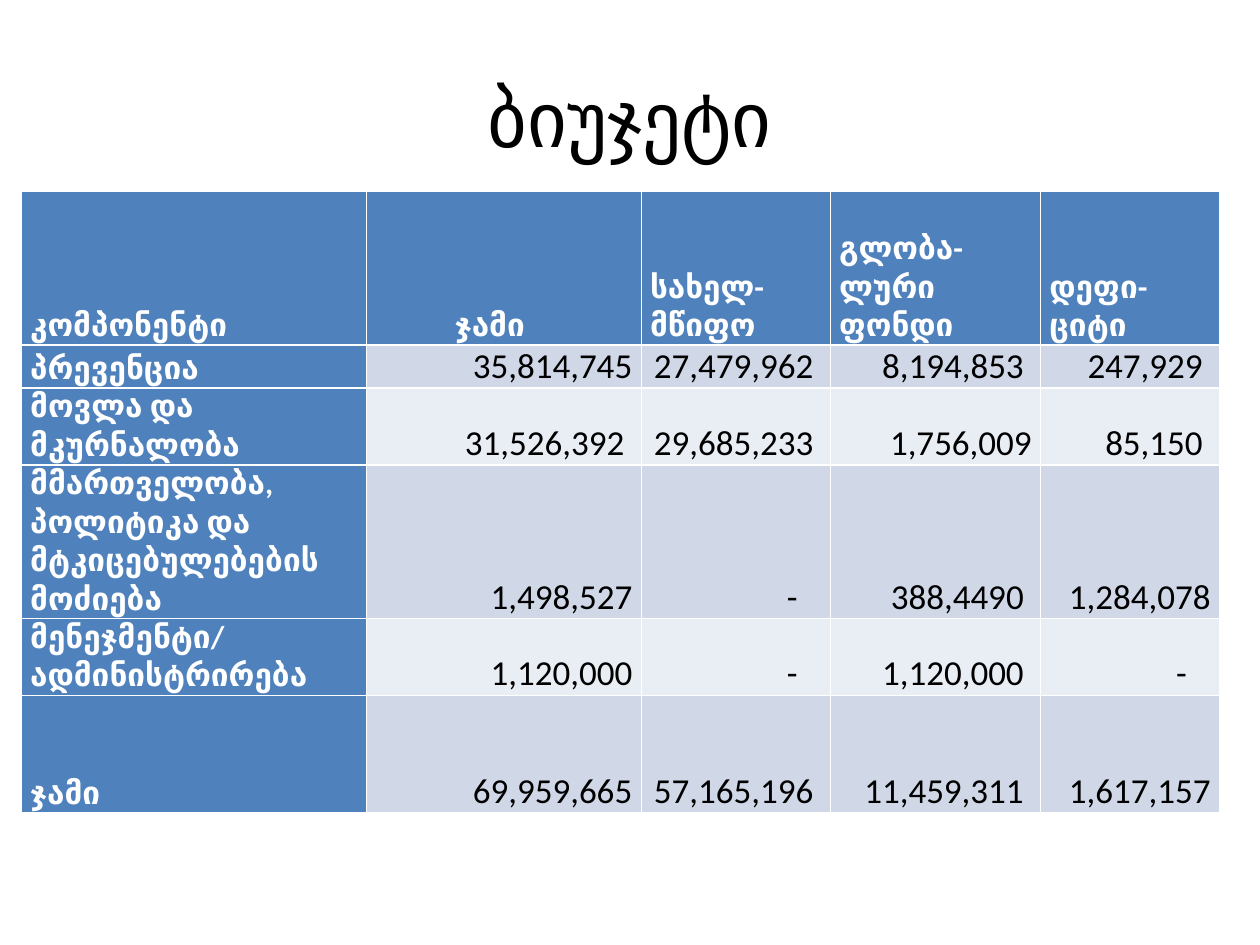
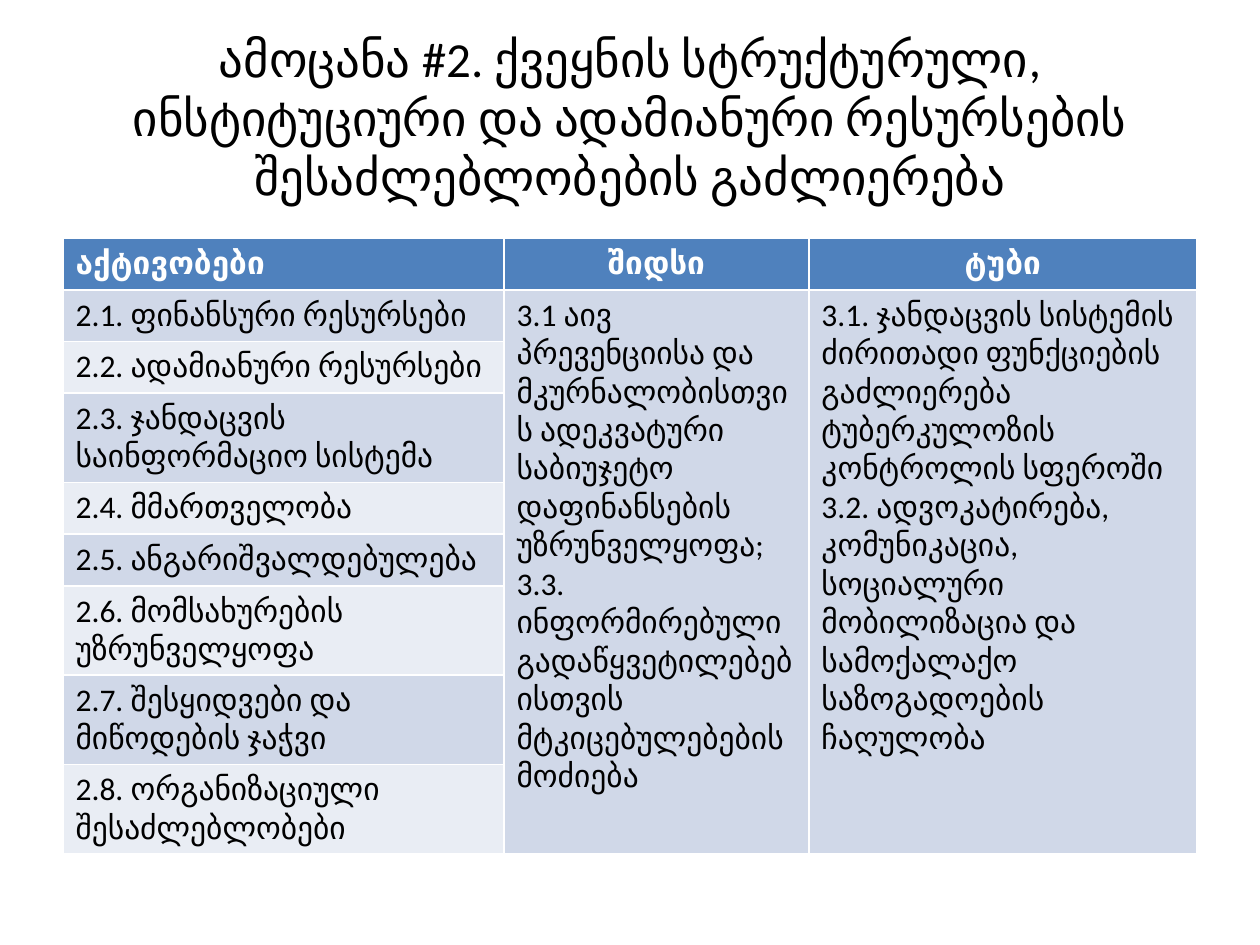
from pptx import Presentation
from pptx import util as u
from pptx.dml.color import RGBColor
from pptx.enum import text

BLUE = RGBColor(0x4F, 0x81, 0xBD)
BANDS = RGBColor(0xD0, 0xD8, 0xE8), RGBColor(0xE9, 0xED, 0xF4)
WHITE = RGBColor(255, 255, 255)
BLACK = RGBColor(0, 0, 0)
LEFT, MID, RIGHT = (text.PP_ALIGN.LEFT, text.PP_ALIGN.CENTER,
                    text.PP_ALIGN.RIGHT)
TOP, LOW = text.MSO_ANCHOR.TOP, text.MSO_ANCHOR.BOTTOM


class Deck:
    """Holds the shared style and the current slide."""

    def __init__(self):
        self.prs = Presentation()
        self.prs.slide_width = u.Inches(10)
        self.prs.slide_height = u.Inches(7.5)
        self.slide = None

    def page(self, title, size):
        self.slide = self.prs.slides.add_slide(self.prs.slide_layouts[6])
        box = self.slide.shapes.add_textbox(
            u.Inches(0.5), u.Inches(0.3), u.Inches(9), u.Inches(1.25))
        frame = box.text_frame
        frame.word_wrap = True
        frame.vertical_anchor = text.MSO_ANCHOR.MIDDLE
        self.label(frame, title, size, BLACK, align=MID)

    def label(self, frame, words, size, color, bold=False, align=LEFT):
        for i, line in enumerate(words.split("\n")):
            para = frame.add_paragraph() if i else frame.paragraphs[0]
            para.alignment = align
            run = para.add_run()
            run.text = line
            font = run.font
            font.name, font.size, font.bold = "Calibri", u.Pt(size), bold
            font.color.rgb = color

    def table(self, left, top, cols, rows):
        frame = self.slide.shapes.add_table(
            len(rows), len(cols), u.Inches(left), u.Inches(top),
            u.Inches(sum(cols)), u.Inches(sum(rows)))
        grid = frame.table
        for col, width in zip(grid.columns, cols):
            col.width = u.Inches(width)
        for row, height in zip(grid.rows, rows):
            row.height = u.Inches(height)
        return grid

    def cell(self, cell, words, row, size=18, head=False, align=LEFT,
             anchor=TOP):
        cell.fill.solid()
        cell.fill.fore_color.rgb = BLUE if head else BANDS[(row - 1) % 2]
        cell.vertical_anchor = anchor
        self.label(cell.text_frame, words, size,
                   WHITE if head else BLACK, head, align)

    def pad(self, cell, left=0.07, right=0.07):
        cell.margin_left, cell.margin_right = u.Inches(left), u.Inches(right)
        cell.margin_top = cell.margin_bottom = 0


BUDGET = [
    ("კომპონენტი", "ჯამი", "სახელ-მწიფო", "გლობა-ლური ფონდი", "დეფი-ციტი"),
    ("პრევენცია", "35,814,745", "27,479,962 ", "8,194,853 ", "247,929 "),
    ("მოვლა და მკურნალობა", "31,526,392 ", "29,685,233 ", "1,756,009",
     "85,150 "),
    ("მმართველობა, პოლიტიკა და მტკიცებულებების მოძიება", "1,498,527", "-",
     "388,4490 ", "1,284,078"),
    ("მენეჯმენტი/ადმინისტრირება", "1,120,000", "-", "1,120,000 ", "-"),
    ("ჯამი", "69,959,665", "57,165,196 ", "11,459,311 ", "1,617,157"),
]

HEADS = "აქტივობები", "შიდსი", "ტუბი"
TASKS = [
    "2.1. ფინანსური რესურსები",
    "2.2. ადამიანური რესურსები",
    "2.3. ჯანდაცვის საინფორმაციო სისტემა",
    "2.4. მმართველობა",
    "2.5. ანგარიშვალდებულება",
    "2.6. მომსახურების უზრუნველყოფა",
    "2.7. შესყიდვები და მიწოდების ჯაჭვი",
    "2.8. ორგანიზაციული შესაძლებლობები",
]
GOALS = [
    "3.1 აივ პრევენციისა და მკურნალობისთვის ადეკვატური საბიუჯეტო "
    "დაფინანსების უზრუნველყოფა; 3.3. ინფორმირებული "
    "გადაწყვეტილებებისთვის მტკიცებულებების მოძიება",
    "3.1. ჯანდაცვის სისტემის ძირითადი ფუნქციების გაძლიერება "
    "ტუბერკულოზის კონტროლის სფეროში\n"
    "3.2. ადვოკატირება, კომუნიკაცია, სოციალური მობილიზაცია და "
    "სამოქალაქო საზოგადოების ჩაღულობა",
]


def budget(deck):
    deck.page("ბიუჯეტი", 44)
    grid = deck.table(0.17, 1.52, [2.74, 2.18, 1.5, 1.67, 1.42],
                      [1.22, 0.34, 0.61, 1.22, 0.61, 0.93])
    grid.first_col = True
    for r, line in enumerate(BUDGET):
        for c, words in enumerate(line):
            cell = grid.cell(r, c)
            head = r == 0 or c == 0
            deck.cell(cell, words, r, 18 if head else 20, head,
                      LEFT if head else RIGHT, LOW)
            deck.pad(cell, 0.7 if (r, c) == (0, 1) else 0.07,
                     0.26 if words == "-" else 0.07)


def tasks(deck):
    deck.page("ამოცანა #2. ქვეყნის სტრუქტურული, ინსტიტუციური და ადამიანური "
              "რესურსების შესაძლებლობების გაძლიერება", 28)
    one, two = 0.41, 0.71
    grid = deck.table(0.5, 1.89, [3.5, 2.42, 3.08],
                      [one, one, one, two, one, one, two, two, two])
    for c, words in enumerate(HEADS):
        deck.cell(grid.cell(0, c), words, 0, head=True,
                  align=MID if c else LEFT)
    for r, words in enumerate(TASKS, 1):
        deck.cell(grid.cell(r, 0), words, r)
    for c, words in enumerate(GOALS, 1):
        grid.cell(1, c).merge(grid.cell(len(TASKS), c))
        deck.cell(grid.cell(1, c), words, 1)


def main():
    deck = Deck()
    budget(deck)
    tasks(deck)
    deck.prs.save("out.pptx")


if __name__ == "__main__":
    main()
